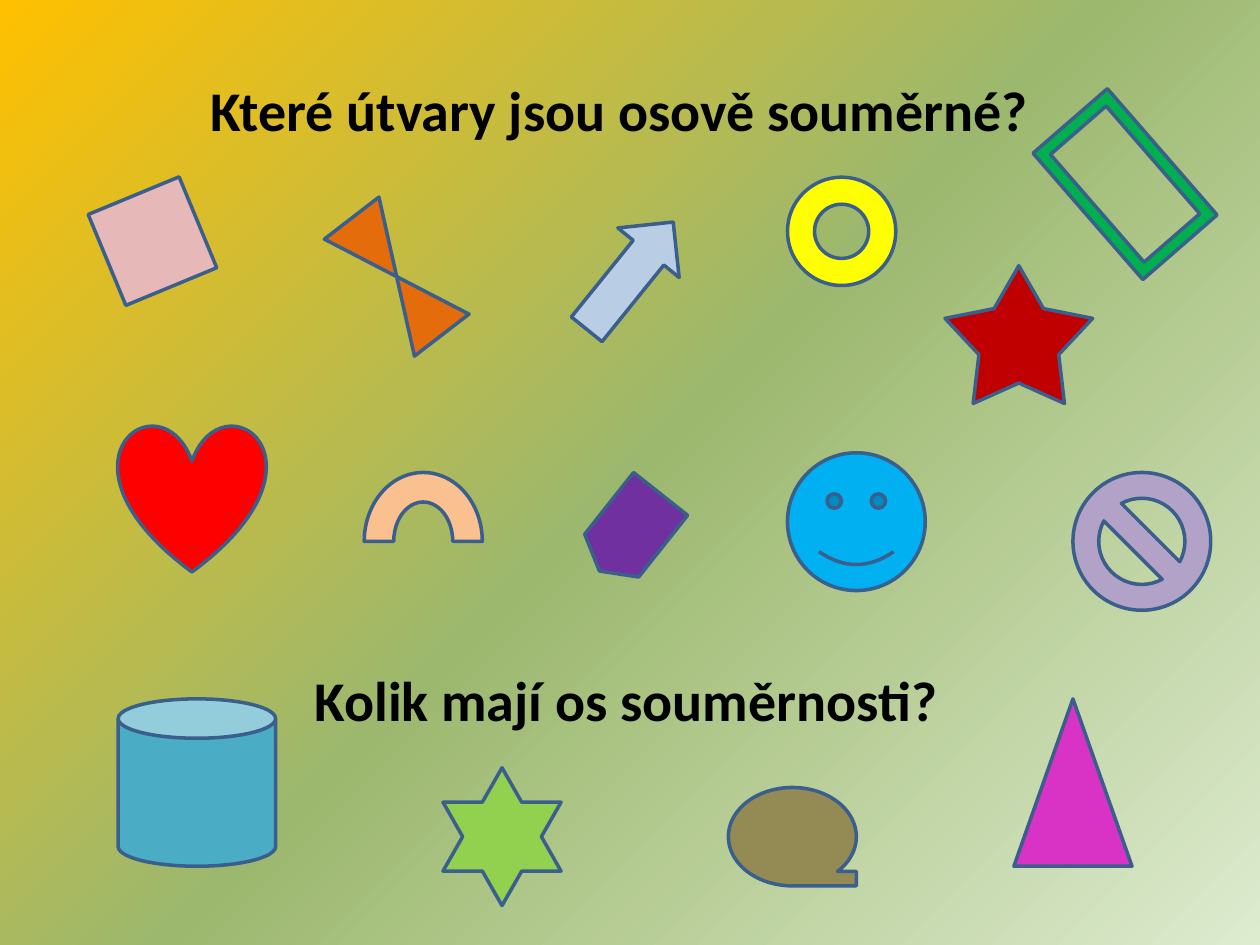
from copy import deepcopy
from pptx import Presentation
from pptx.dml.color import RGBColor
from pptx.enum.shapes import MSO_SHAPE as Geo
from pptx.enum.text import MSO_AUTO_SIZE as Fit
from pptx.util import Inches, Pt

COLS, ROWS = 128, 96
UNIT = Inches(10) / COLS
EDGE = "3A5F8C"


def paint(color):
    """Turn a hex string into a colour."""
    return RGBColor.from_string(color)


def cells(box, col, row, wide, high):
    """Turn grid cells counted from a box into slide lengths."""
    left, top = box
    return [round(n * UNIT) for n in (left + col, top + row, wide, high)]


def write(slide, spot, text, size=32, font="Calibri", color="000000", bold=True):
    """Add a line of text that does not wrap."""
    frame = slide.shapes.add_textbox(*spot).text_frame
    frame.word_wrap = False
    frame.auto_size = Fit.SHAPE_TO_FIT_TEXT
    run = frame.paragraphs[0].add_run()
    run.text = text
    run.font.size, run.font.name, run.font.bold = Pt(size), font, bold
    run.font.color.rgb = paint(color)


def draw(slide, box, kind, color, place, turn=0, adjust=None):
    """Add one outlined figure at its place in a box."""
    shape = slide.shapes.add_shape(kind, *cells(box, *place))
    shape.shadow.inherit = False
    shape.fill.solid()
    shape.fill.fore_color.rgb = paint(color)
    shape.line.color.rgb = paint(EDGE)
    shape.line.width = Pt(2)
    shape.rotation = turn
    if adjust is not None:
        shape.adjustments[0] = adjust


def shade(slide, colors):
    """Fill the background with evenly spaced colours, rising to the top left."""
    fill = slide.background.fill
    fill.gradient()
    fill.gradient_angle = 135
    first = slide.element.xpath(".//p:bg//a:gs")[0]
    for _ in colors[2:]:
        first.addnext(deepcopy(first))
    for i, (stop, color) in enumerate(zip(fill.gradient_stops, colors)):
        stop.position = i / (len(colors) - 1)
        stop.color.rgb = paint(color)


def top(slide, box):
    """Place the first question and the figures below it."""
    write(slide, cells(box, 20.1, 7, 87.7, 8.2), "Které útvary jsou osově souměrné?")
    draw(slide, box, Geo.RECTANGLE, "E6B9B8", (10.5, 19.5, 10, 10), 337.5)
    draw(slide, box, Geo.FLOWCHART_COLLATE, "E46C0A", (36.8, 20.6, 7, 15), 322.4)
    draw(slide, box, Geo.DOWN_ARROW, "B9CDE5", (60, 21, 8, 14), 218.9)
    draw(slide, box, Geo.DONUT, "FFFF00", (80, 18, 11, 11))
    draw(slide, box, Geo.STAR_5_POINT, "C00000", (96, 27, 15, 14), adjust=0.27)
    draw(slide, box, Geo.FRAME, "00B050", (109.3, 10.2, 10, 17), 319)


def middle(slide, box):
    """Place the row of figures across the middle."""
    draw(slide, box, Geo.HEART, "FF0000", (12, 1.1, 15, 15))
    draw(slide, box, Geo.BLOCK_ARC, "FAC090", (37, 6, 12, 14))
    draw(slide, box, Geo.FLOWCHART_OFFPAGE_CONNECTOR, "7030A0", (60.5, 7.1, 7, 10), 38.4)
    draw(slide, box, Geo.SMILEY_FACE, "00B0F0", (80, 4, 14, 14))
    draw(slide, box, Geo.NO_SYMBOL, "B3A2C7", (109, 6, 14, 14))


def bottom(slide, box):
    """Place the second question and the figures around it."""
    write(slide, cells(box, 30.7, 3, 66.6, 8.2), "Kolik mají os souměrnosti?")
    draw(slide, box, Geo.CAN, "4BACC6", (12, 7, 16, 17))
    draw(slide, box, Geo.STAR_6_POINT, "92D050", (45, 14, 12, 14))
    draw(slide, box, Geo.FLOWCHART_SEQUENTIAL_ACCESS_STORAGE, "948A54", (74, 16, 13, 10))
    draw(slide, box, Geo.FLOWCHART_EXTRACT, "D933C5", (103, 7, 12, 17))


def main():
    """Build the slide and save it."""
    deck = Presentation()
    deck.slide_width, deck.slide_height = round(COLS * UNIT), round(ROWS * UNIT)
    slide = deck.slides.add_slide(deck.slide_layouts[6])
    shade(slide, ["DDEBCF", "9CB86E", "FFC000"])
    top(slide, (0, 0))
    middle(slide, (0, 42))
    bottom(slide, (0, 64))
    deck.save("out.pptx")


if __name__ == "__main__":
    main()
